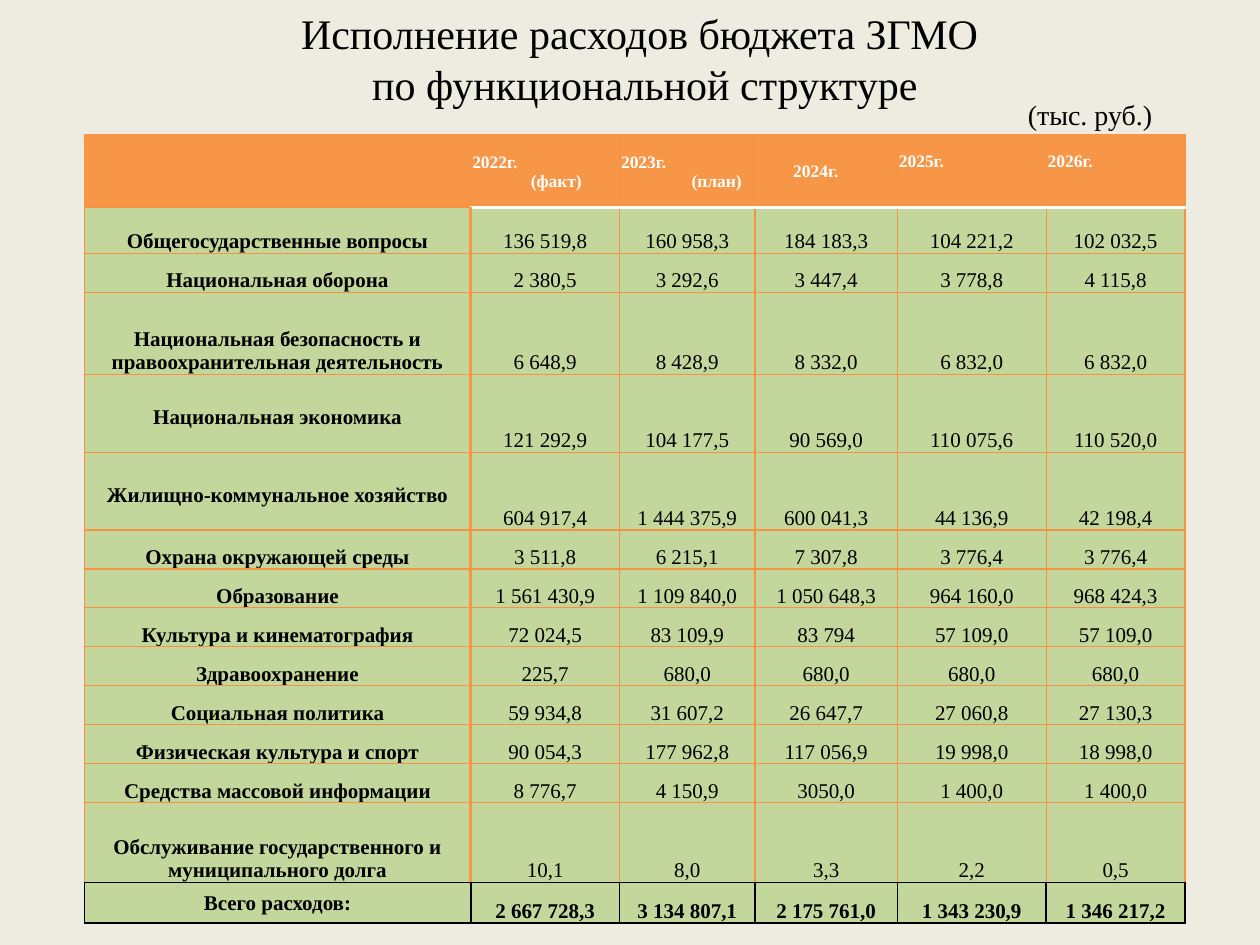
"""Build a slide with a table of municipal budget spending by function."""
import pptx
import pptx.dml.color
import pptx.enum.text
import pptx.oxml
import pptx.oxml.ns
import pptx.util

Cm = pptx.util.Cm
Pt = pptx.util.Pt
ALIGN = pptx.enum.text.PP_ALIGN
ANCHOR = pptx.enum.text.MSO_ANCHOR

COLORS = {
    "background": "EEECE1", "header": "F79646", "body": "C3D69B",
    "grid": "F69240", "white": "FFFFFF", "black": "000000",
}
FONT = "Times New Roman"
TITLE = "Исполнение расходов бюджета ЗГМО \vпо функциональной структуре"
UNIT = "(тыс. руб.)"
HEADERS = [
    {"lines": []},
    {"lines": [("2022г.", 0), ("(факт)", 1.18)], "align": ALIGN.LEFT},
    {"lines": [("2023г.", 0), ("(план)", 1.42)], "align": ALIGN.LEFT},
    {"lines": [("2024г.", 0)], "right": 0.45},
    {"lines": [("2025г.", 0)], "align": ALIGN.LEFT, "bottom": 0.4},
    {"lines": [("2026г.", 0)], "align": ALIGN.LEFT, "bottom": 0.4},
]
ROWS = [
    ("Общегосударственные вопросы", "136 519,8", "160 958,3", "184 183,3", "104 221,2", "102 032,5"),
    ("Национальная оборона", "2 380,5", "3 292,6", "3 447,4", "3 778,8", "4 115,8"),
    ("Национальная безопасность и правоохранительная деятельность",
     "6 648,9", "8 428,9", "8 332,0", "6 832,0", "6 832,0"),
    ("Национальная экономика", "121 292,9", "104 177,5", "90 569,0", "110 075,6", "110 520,0"),
    ("Жилищно-коммунальное хозяйство", "604 917,4", "1 444 375,9", "600 041,3", "44 136,9", "42 198,4"),
    ("Охрана окружающей среды", "3 511,8", "6 215,1", "7 307,8", "3 776,4", "3 776,4"),
    ("Образование", "1 561 430,9", "1 109 840,0", "1 050 648,3", "964 160,0", "968 424,3"),
    ("Культура и кинематография", "72 024,5", "83 109,9", "83 794", "57 109,0", "57 109,0"),
    ("Здравоохранение", "225,7", "680,0", "680,0", "680,0", "680,0"),
    ("Социальная политика", "59 934,8", "31 607,2", "26 647,7", "27 060,8", "27 130,3"),
    ("Физическая культура и спорт", "90 054,3", "177 962,8", "117 056,9", "19 998,0", "18 998,0"),
    ("Средства массовой информации", "8 776,7", "4 150,9", "3050,0", "1 400,0", "1 400,0"),
    ("Обслуживание государственного и муниципального долга", "10,1", "8,0", "3,3", "2,2", "0,5"),
    ("Всего расходов:", "2 667 728,3", "3 134 807,1", "2 175 761,0", "1 343 230,9", "1 346 217,2"),
]
TOTAL = len(ROWS)
RAISED_LABELS = {"Национальная экономика", "Жилищно-коммунальное хозяйство"}
COLUMN_WIDTHS = [7.79, 3.0, 2.73, 2.87, 3.0, 2.8]
ROW_HEIGHT = 0.785
TALL_ROWS = {0: 1.46, 1: 0.93, 3: 1.65, 4: 1.57, 5: 1.57, 13: 1.61, 14: 0.82}


def rgb(name):
    return pptx.dml.color.RGBColor.from_string(COLORS[name])


def write(frame, lines, size, color="black", bold=False, align=ALIGN.CENTER):
    """Fill a text frame with (text, left indent in cm) lines."""
    frame.word_wrap = True
    for index, (text, indent) in enumerate(lines):
        paragraph = frame.paragraphs[0] if index == 0 else frame.add_paragraph()
        paragraph.text = text
        paragraph.alignment = align
        if indent:
            paragraph._p.get_or_add_pPr().set("marL", str(int(Cm(indent))))
        for run in paragraph.runs:
            run.font.name = FONT
            run.font.size = Pt(size)
            run.font.bold = bold
            run.font.color.rgb = rgb(color)


def horizontal_edge(edge, column):
    if edge >= TOTAL:
        return "black", 1
    return ("white", 2) if edge == 1 and column else ("grid", 0.75)


def vertical_edge(edge, row):
    if row == TOTAL:
        return "black", 1
    return ("header", 2) if edge == 1 and row else ("grid", 0.75)


def set_borders(cell, row, column):
    edges = {
        "lnL": vertical_edge(column, row), "lnR": vertical_edge(column + 1, row),
        "lnT": horizontal_edge(row, column), "lnB": horizontal_edge(row + 1, column),
    }
    for tag, (color, width) in edges.items():
        cell._tc.get_or_add_tcPr().append(pptx.oxml.parse_xml(
            f'<a:{tag} {pptx.oxml.ns.nsdecls("a")} w="{int(Pt(width))}"><a:solidFill>'
            f'<a:srgbClr val="{COLORS[color]}"/></a:solidFill></a:{tag}>'))


def format_cell(cell, row, column, fill, anchor, right=0.03, bottom=0):
    set_borders(cell, row, column)
    cell.fill.solid()
    cell.fill.fore_color.rgb = rgb(fill)
    cell.vertical_anchor = anchor
    cell.margin_left = cell.margin_top = Cm(0.03)
    cell.margin_right, cell.margin_bottom = Cm(right), Cm(bottom)


def add_budget_table(slide):
    heights = [TALL_ROWS.get(row, ROW_HEIGHT) for row in range(TOTAL + 1)]
    table = slide.shapes.add_table(
        len(heights), len(COLUMN_WIDTHS), Cm(1.7), Cm(2.72),
        Cm(sum(COLUMN_WIDTHS)), Cm(sum(heights))).table
    table.first_row = table.horz_banding = False
    for column, width in zip(table.columns, COLUMN_WIDTHS):
        column.width = Cm(width)
    for row, height in zip(table.rows, heights):
        row.height = Cm(height)
    for column, header in enumerate(HEADERS):
        cell = table.cell(0, column)
        format_cell(cell, 0, column, "header", ANCHOR.MIDDLE,
                    header.get("right", 0.03), header.get("bottom", 0))
        write(cell.text_frame, header["lines"], 10, "white", True,
              header.get("align", ALIGN.CENTER))
    for row, values in enumerate(ROWS, 1):
        for column, value in enumerate(values):
            cell = table.cell(row, column)
            is_total_label = row == TOTAL and column == 0
            format_cell(cell, row, column, "body",
                        ANCHOR.MIDDLE if is_total_label else ANCHOR.BOTTOM,
                        bottom=0.46 if value in RAISED_LABELS else 0)
            write(cell.text_frame, [(value, 0)], 12, bold=column == 0 or row == TOTAL)


def main():
    presentation = pptx.Presentation()
    presentation.slide_width, presentation.slide_height = Cm(25.4), Cm(19.05)
    slide = presentation.slides.add_slide(presentation.slide_layouts[5])
    slide.background.fill.solid()
    slide.background.fill.fore_color.rgb = rgb("background")

    title = slide.shapes.title
    title.left, title.top, title.width, title.height = Cm(0.3), Cm(0), Cm(25.4), Cm(2.34)
    add_budget_table(slide)
    unit = slide.shapes.add_textbox(Cm(19.69), Cm(1.9), Cm(4.57), Cm(0.79))
    for shape, text, size in ((title, TITLE, 24), (unit, UNIT, 16)):
        write(shape.text_frame, [(text, 0)], size)
        shape.text_frame.vertical_anchor = ANCHOR.MIDDLE
        shape.text_frame.auto_size = pptx.enum.text.MSO_AUTO_SIZE.NONE
    presentation.save("out.pptx")


if __name__ == "__main__":
    main()
